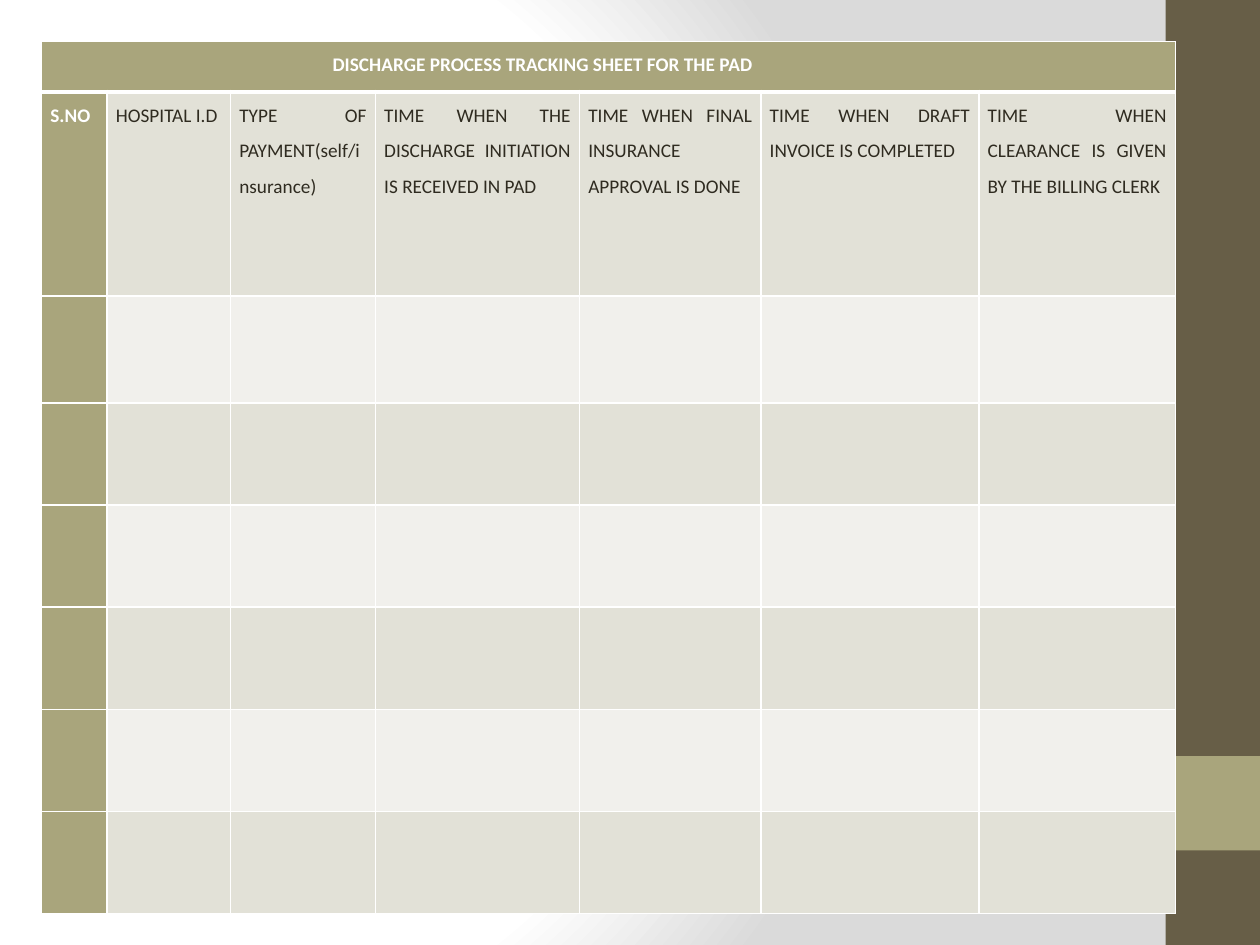
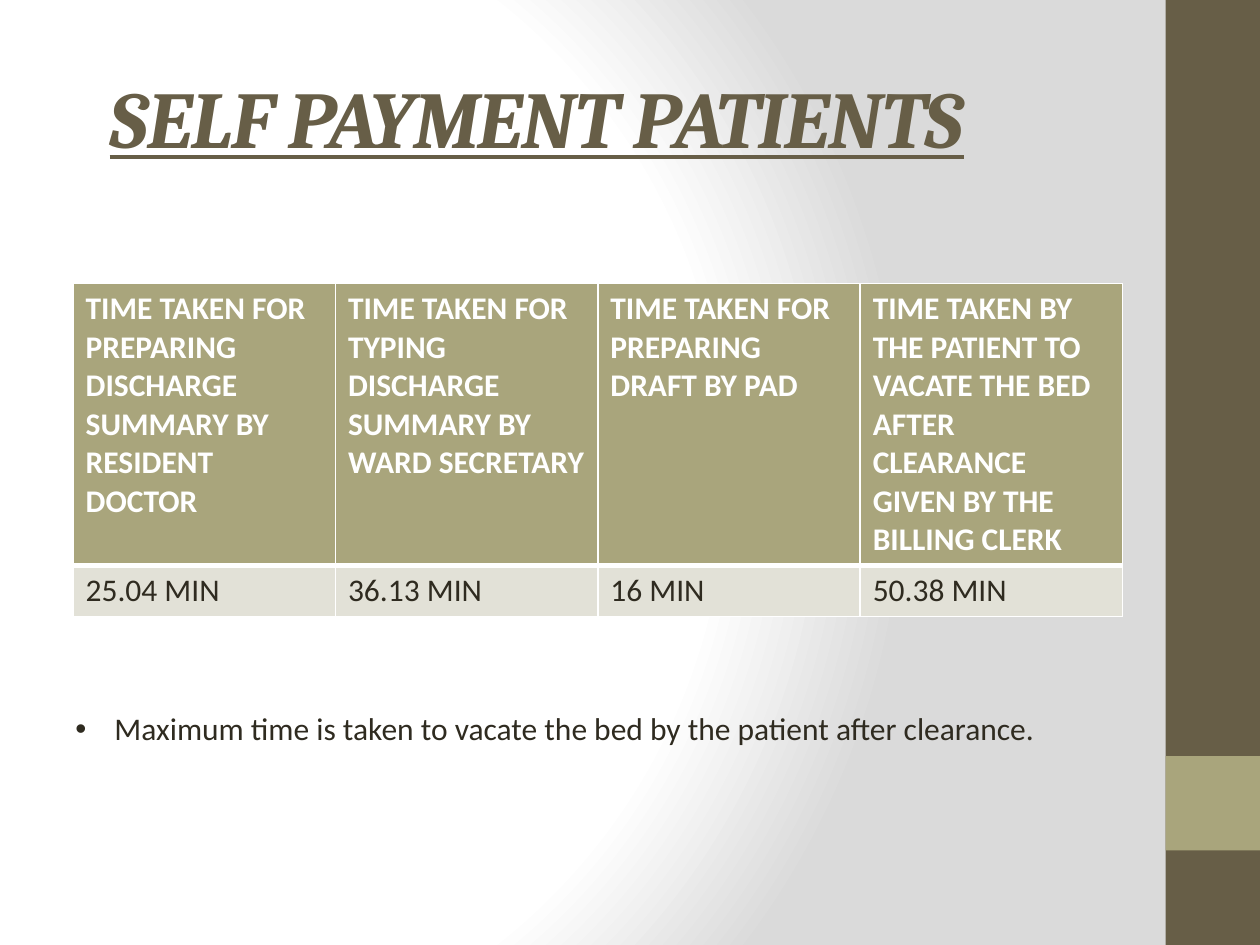
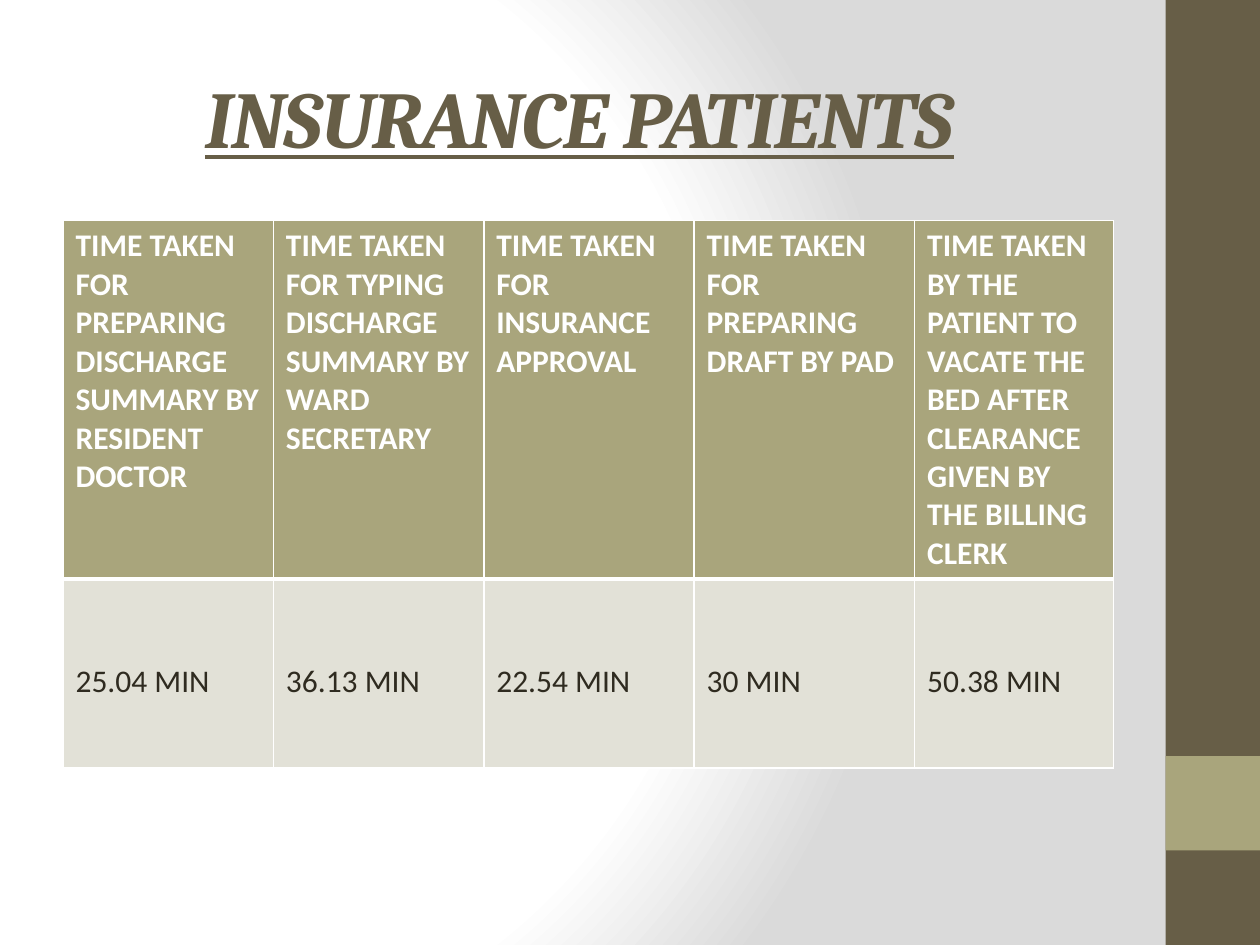
from dataclasses import dataclass

from lxml import etree
from pptx import Presentation
from pptx.dml.color import RGBColor
from pptx.enum.shapes import MSO_SHAPE
from pptx.enum.text import MSO_ANCHOR, MSO_AUTO_SIZE, PP_ALIGN
from pptx.oxml import parse_xml
from pptx.oxml.ns import nsdecls, qn
from pptx.util import Inches, Pt

RECT = MSO_SHAPE.RECTANGLE
MIDDLE = MSO_ANCHOR.MIDDLE
NO_FIT = MSO_AUTO_SIZE.NONE
LEFT, JUSTIFY = PP_ALIGN.LEFT, PP_ALIGN.JUSTIFY
TITLE_ONLY, BLANK = 5, 6


@dataclass(frozen=True)
class Theme:
    brown: str = "675E47"
    olive: str = "A9A57C"
    ink: str = "2F2B20"
    white: str = "FFFFFF"
    gray: str = "DADADA"
    bands: tuple = ("E2E1D7", "F1F0EC")
    head: str = "Cambria"
    body: str = "Calibri"
    title: int = 46
    text: int = 18
    small: int = 11
    thin: int = 1
    thick: int = 3


class Deck:
    def __init__(self, theme):
        self.theme = theme
        self.prs = Presentation()
        self.prs.slide_width, self.prs.slide_height = Inches(10), Inches(7.5)
        self.slide = None
        self.backdrop()

    def backdrop(self):
        """Give the master a round gradient from white to gray."""
        master = self.prs.slide_master
        master.background.fill.solid()
        stops = ((0, self.theme.white), (75, self.theme.white), (100, self.theme.gray))
        marks = "".join(f'<a:gs pos="{pos * 1000}"><a:srgbClr val="{color}"/></a:gs>'
                        for pos, color in stops)
        fill = parse_xml(
            f'<a:gradFill {nsdecls("a")} rotWithShape="1"><a:gsLst>{marks}</a:gsLst>'
            '<a:path path="circle"><a:fillToRect l="20000" t="50000" r="100000" b="50000"/>'
            '</a:path></a:gradFill>')
        props = master.element.find(".//" + qn("p:bgPr"))
        props.replace(props[0], fill)

    def page(self, layout):
        """Start a slide with the side bands."""
        self.slide = self.prs.slides.add_slide(self.prs.slide_layouts[layout])
        self.band(0, 7.5, self.theme.brown)
        self.band(6, 0.75, self.theme.olive)

    def band(self, top, height, color):
        shape = self.slide.shapes.add_shape(
            RECT, Inches(9.25), Inches(top), Inches(0.75), Inches(height))
        shape.shadow.inherit = False
        shape.fill.solid()
        shape.fill.fore_color.rgb = RGBColor.from_string(color)
        shape.line.fill.background()

    def style(self, para, font, size, color, bold=False):
        for run in para.runs:
            run.font.name, run.font.size, run.font.bold = font, Pt(size), bold
            run.font.color.rgb = RGBColor.from_string(color)

    def indent(self, para, left, first=0):
        """Set the left margin and first-line shift; return the properties."""
        props = para._p.get_or_add_pPr()
        props.set("marL", str(Inches(left)))
        props.set("indent", str(Inches(first)))
        return props

    def title(self, text, inset):
        shape = self.slide.shapes.title
        shape.left, shape.top = Inches(0.5), Inches(0.3)
        shape.width, shape.height = Inches(8.33), Inches(1.25)
        frame = shape.text_frame
        frame.text = text
        frame.auto_size, frame.vertical_anchor = NO_FIT, MIDDLE
        frame.margin_left = Inches(inset)
        para = frame.paragraphs[0]
        para.alignment = LEFT
        self.style(para, self.theme.head, self.theme.title, self.theme.brown, True)
        font = para.runs[0].font
        font.italic = font.underline = True
        para.runs[0]._r.get_or_add_rPr().set("spc", "-100")

    def bullet(self, text, left, top, width, height):
        box = self.slide.shapes.add_textbox(
            Inches(left), Inches(top), Inches(width), Inches(height))
        frame = box.text_frame
        frame.word_wrap = True
        frame.text = text
        para = frame.paragraphs[0]
        self.style(para, self.theme.body, self.theme.text, self.theme.ink)
        props = self.indent(para, 0.31, -0.31)
        etree.SubElement(props, qn("a:buFont")).set("typeface", "Arial")
        etree.SubElement(props, qn("a:buChar")).set("char", "•")

    def border(self, cell, row):
        top = self.theme.thick if row == 1 else self.theme.thin
        bottom = self.theme.thick if row == 0 else self.theme.thin
        sides = (("L", self.theme.thin), ("R", self.theme.thin), ("T", top), ("B", bottom))
        props = cell._tc.get_or_add_tcPr()
        for index, (side, width) in enumerate(sides):
            props.insert(index, parse_xml(
                f'<a:ln{side} {nsdecls("a")} w="{Pt(width)}"><a:solidFill>'
                f'<a:srgbClr val="{self.theme.white}"/></a:solidFill></a:ln{side}>'))

    def table(self, left, top, widths, heights, texts, size, side=False):
        """Draw a table; side colours the first column like the header."""
        table = self.slide.shapes.add_table(
            len(heights), len(widths), Inches(left), Inches(top),
            Inches(sum(widths)), Inches(sum(heights))).table
        table.horz_banding = False
        for col, width in zip(table.columns, widths):
            col.width = Inches(width)
        for row, height in zip(table.rows, heights):
            row.height = Inches(height)
        for r in range(len(heights)):
            for c in range(len(widths)):
                cell = table.cell(r, c)
                strong = r == 0 or (side and c == 0)
                fill = self.theme.olive if strong else self.theme.bands[(r - 1) % 2]
                cell.fill.solid()
                cell.fill.fore_color.rgb = RGBColor.from_string(fill)
                self.border(cell, r)
                if r < len(texts) and c < len(texts[r]):
                    cell.text = texts[r][c]
                    color = self.theme.white if strong else self.theme.ink
                    self.style(cell.text_frame.paragraphs[0],
                               self.theme.body, size, color, strong)
        return table


DOCTOR = "TIME TAKEN FOR PREPARING DISCHARGE SUMMARY BY RESIDENT DOCTOR"
TYPING = "TIME TAKEN FOR TYPING DISCHARGE SUMMARY BY WARD SECRETARY"
APPROVAL = "TIME TAKEN FOR INSURANCE APPROVAL"
DRAFT = "TIME TAKEN FOR PREPARING DRAFT BY PAD"
VACATE = ("TIME TAKEN BY THE PATIENT TO VACATE THE BED AFTER CLEARANCE "
          "GIVEN BY THE BILLING CLERK")
SHEET = (
    ("DISCHARGE PROCESS TRACKING SHEET FOR THE PAD",),
    ("S.NO", "HOSPITAL I.D", "TYPE OF PAYMENT(self/insurance)",
     "TIME WHEN THE DISCHARGE INITIATION IS RECEIVED IN PAD",
     "TIME WHEN FINAL INSURANCE APPROVAL IS DONE",
     "TIME WHEN DRAFT INVOICE IS COMPLETED",
     "TIME WHEN CLEARANCE IS GIVEN BY THE BILLING CLERK"),
)


def tracking(deck):
    deck.page(BLANK)
    table = deck.table(0.33, 0.33, (0.52, 0.98, 1.15, 1.62, 1.44, 1.73, 1.56),
                       (0.4, 1.62, 0.85) + (0.81,) * 5, SHEET, deck.theme.small, side=True)
    for r, row in enumerate(SHEET):
        for c in range(len(row)):
            cell = table.cell(r, c)
            cell.margin_left = cell.margin_right = Inches(0.07)
            cell.margin_top = cell.margin_bottom = 0
            para = cell.text_frame.paragraphs[0]
            para.alignment, para.line_spacing = JUSTIFY, 1.5
    banner = table.cell(0, 0)
    banner.merge(table.cell(0, 6))
    deck.indent(banner.text_frame.paragraphs[0], 2.24)


def self_pay(deck):
    deck.page(TITLE_ONLY)
    deck.title("SELF PAYMENT PATIENTS", 0.37)
    texts = ((DOCTOR, TYPING, DRAFT, VACATE),
             ("25.04 MIN", "36.13 MIN", "16 MIN", "50.38 MIN"))
    deck.table(0.58, 2.25, (8.33 / 4,) * 4, (2.23, 0.4), texts, deck.theme.text)
    deck.bullet("Maximum time is taken to vacate the bed by the patient after clearance.",
                0.5, 5.58, 8.58, 0.71)


def insured(deck):
    deck.page(TITLE_ONLY)
    deck.title("INSURANCE PATIENTS", 1.13)
    texts = ((DOCTOR, TYPING, APPROVAL, DRAFT, VACATE),
             ("25.04 MIN", "36.13 MIN", "22.54 MIN", "30 MIN", "50.38 MIN"))
    table = deck.table(0.5, 1.75, (1.67, 1.67, 1.67, 1.75, 1.58), (2.84, 1.5),
                       texts, deck.theme.text)
    for cell in table.rows[1].cells:
        cell.margin_top = Inches(0.66)


def main():
    deck = Deck(Theme())
    tracking(deck)
    self_pay(deck)
    insured(deck)
    deck.prs.save("out.pptx")


if __name__ == "__main__":
    main()
